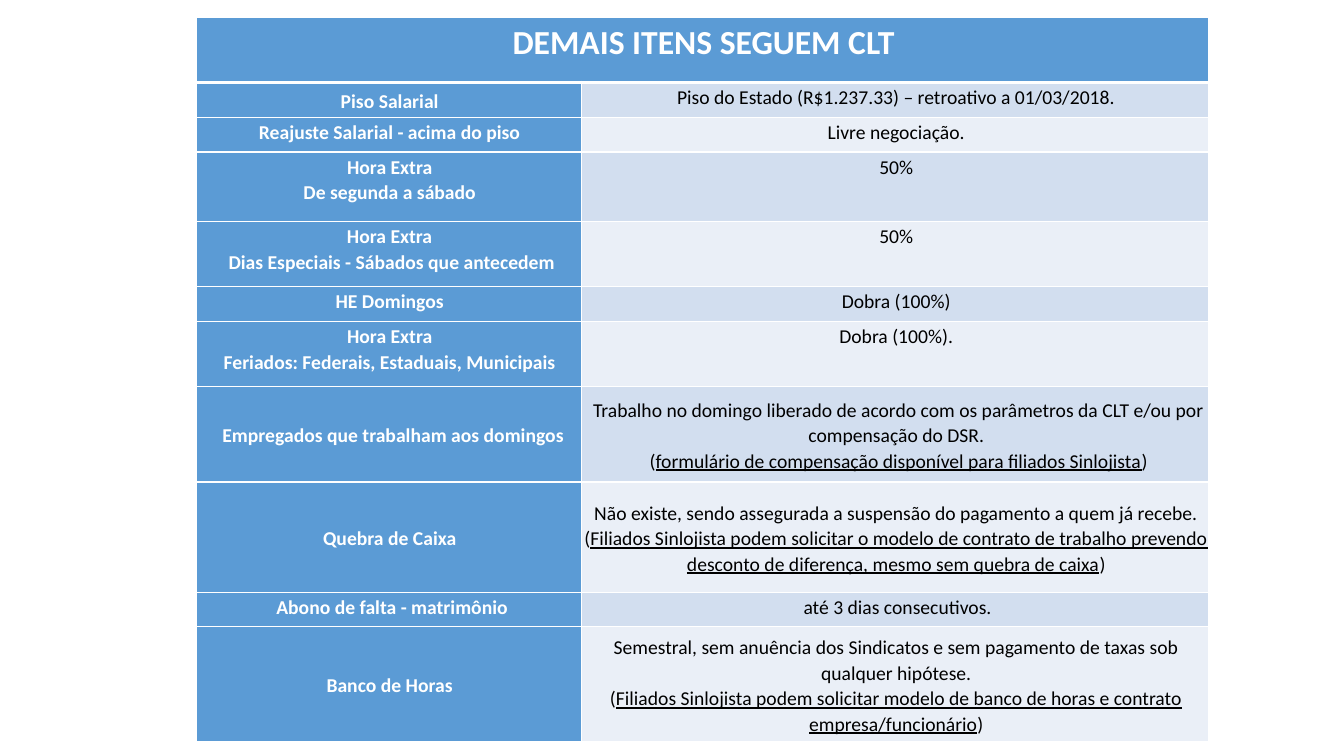
from copy import deepcopy
from lxml import etree
from pptx import Presentation
from pptx.dml.color import RGBColor
from pptx.enum import text
from pptx.oxml import ns
from pptx.util import Pt

BLUE = RGBColor(0x5B, 0x9B, 0xD5)
BANDS = [RGBColor(0xD2, 0xDE, 0xEF), RGBColor(0xEA, 0xEF, 0xF7)]
WHITE = RGBColor(0xFF, 0xFF, 0xFF)
BLACK = RGBColor(0, 0, 0)
TOP, MID = text.MSO_ANCHOR.TOP, text.MSO_ANCHOR.MIDDLE

TITLE = "DEMAIS ITENS SEGUEM CLT"
# Height, label, label anchor, label indent, value, value anchor, value indent
# Bars in a value enclose its underlined part
ITEMS = [
    (24.8, "Piso Salarial", MID, 0,
     "Piso do Estado (R$1.237.33) – retroativo a 01/03/2018.", TOP, 0),
    (24.8, "Reajuste Salarial - acima do piso", TOP, 0,
     "Livre negociação.", TOP, 0),
    (49.6, "Hora Extra\nDe segunda a sábado", TOP, 0, "50%", TOP, 0),
    (46.5, "Hora Extra \nDias Especiais - Sábados que antecedem", TOP, 3,
     "50%", TOP, 0),
    (24.8, "HE Domingos", TOP, 0, "Dobra (100%)", TOP, 0),
    (46.5, "Hora Extra\nFeriados: Federais, Estaduais, Municipais", TOP, 0,
     "Dobra (100%).", TOP, 0),
    (68.5, "Empregados que trabalham aos domingos", MID, 5,
     "Trabalho no domingo liberado de acordo com os parâmetros da CLT e/ou por "
     "compensação do DSR. \n(|formulário de compensação disponível para "
     "filiados Sinlojista|)", MID, 3.5),
    (78.6, "Quebra de Caixa", MID, 0,
     "Não existe, sendo assegurada a suspensão do pagamento a quem já recebe.\n"
     "(|Filiados Sinlojista podem solicitar o modelo de contrato de trabalho "
     "prevendo desconto de diferença, mesmo sem quebra de caixa|)", MID, 0),
    (24.8, "Abono de falta - matrimônio", TOP, 3.5,
     "até 3 dias consecutivos.", TOP, 2),
    (82, "Banco de Horas", MID, 0,
     "Semestral, sem anuência dos Sindicatos e sem pagamento de taxas sob "
     "qualquer hipótese.\n(|Filiados Sinlojista podem solicitar modelo de banco "
     "de horas e contrato empresa/funcionário|)", MID, 0),
]


def rule(cell, sides, width):
    """Draw white borders on the given sides; call before filling."""
    props = cell._tc.get_or_add_tcPr()
    for side in sides:
        line = etree.SubElement(props, ns.qn("a:ln" + side), w=str(Pt(width)))
        fill = etree.SubElement(line, ns.qn("a:solidFill"))
        etree.SubElement(fill, ns.qn("a:srgbClr"), val=str(WHITE))


def write(cell, words, size, color, bold, fill, anchor, indent):
    cell.fill.solid()
    cell.fill.fore_color.rgb = fill
    cell.margin_left = cell.margin_top = Pt(1.5)
    cell.margin_right = cell.margin_bottom = 0
    cell.vertical_anchor = anchor
    para = cell.text_frame.paragraphs[0]
    first, *rest = words.split("|")
    para.text = first
    for part in rest:
        para.add_run().text = part
    para.alignment = text.PP_ALIGN.CENTER
    para.line_spacing = 1.07
    para.space_after = Pt(8)
    if indent:
        para._p.get_or_add_pPr().set("marL", str(Pt(indent)))
    for run in para.runs:
        font = run.font
        font.name, font.size, font.bold = "Calibri", Pt(size), bold
        font.color.rgb = color
    if rest:
        para.runs[-2].font.underline = True
    for br in para._p.findall(ns.qn("a:br")):
        br.append(deepcopy(para.runs[0]._r.rPr))


# Slide
prs = Presentation()
prs.slide_width, prs.slide_height = Pt(960), Pt(540)
slide = prs.slides.add_slide(prs.slide_layouts[6])

# Table grid
heights = [46.5] + [item[0] for item in ITEMS]
widths = [275.3, 448.3]
table = slide.shapes.add_table(len(heights), 2, Pt(140), Pt(12.5),
                               Pt(sum(widths)), Pt(sum(heights))).table
for row, high in zip(table.rows, heights):
    row.height = Pt(high)
for col, wide in zip(table.columns, widths):
    col.width = Pt(wide)

# Title row
head = table.cell(0, 0)
head.merge(table.cell(0, 1))
for cell in (head, table.cell(0, 1)):
    rule(cell, "LRT", 1)
    rule(cell, "B", 3)
write(head, TITLE, 24, WHITE, True, BLUE, TOP, 0)
props = head.text_frame.paragraphs[0]._p.get_or_add_pPr()
props.set("marL", str(Pt(10)))
props.set("indent", str(Pt(-10)))

# Item rows
for i, (high, label, anchor, indent, value, side, shift) in enumerate(ITEMS):
    left, right = table.cell(i + 1, 0), table.cell(i + 1, 1)
    for cell in (left, right):
        rule(cell, "LR", 1)
        rule(cell, "T", 1 if i else 3)
        rule(cell, "B", 1)
    write(left, label, 14, WHITE, True, BLUE, anchor, indent)
    write(right, value, 14, BLACK, False, BANDS[i % 2], side, shift)

prs.save("out.pptx")
